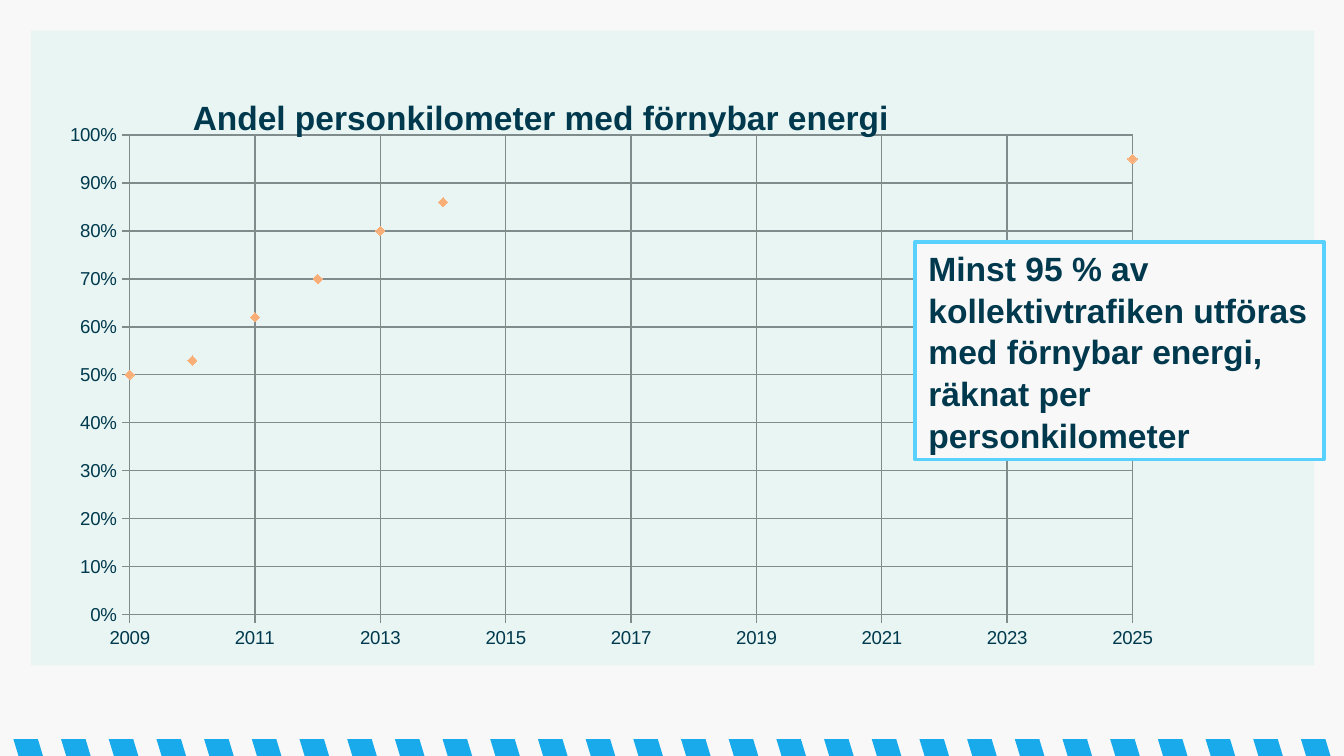
from lxml.etree import SubElement
from pptx import Presentation
from pptx.chart.data import XyChartData
from pptx.dml.color import RGBColor
from pptx.enum.chart import XL_CHART_TYPE, XL_MARKER_STYLE, XL_TICK_MARK
from pptx.enum.shapes import MSO_SHAPE
from pptx.enum.text import MSO_ANCHOR, PP_ALIGN
from pptx.oxml import parse_xml
from pptx.oxml.ns import nsdecls, qn
from pptx.util import Pt

PAPER = RGBColor(0xF8, 0xF8, 0xF8)
MINT = RGBColor(0xE8, 0xF5, 0xF2)
NAVY = RGBColor(0x00, 0x39, 0x4D)
BLUE = RGBColor(0x19, 0xAA, 0xEB)
SKY = RGBColor(0x59, 0xD1, 0xFF)
ORANGE = RGBColor(0xF9, 0xAE, 0x77)
GREEN = RGBColor(0x33, 0x8A, 0x38)
GREY = RGBColor(0x80, 0x8C, 0x8C)

FONT = "Arial"
STRIPE_COUNT = 28
SHARES = {2009: 0.5, 2010: 0.53, 2011: 0.62, 2012: 0.7, 2013: 0.8, 2014: 0.86, 2025: 0.95}
TARGET_YEAR = 2025


def add_filled_shape(shapes, kind, left, top, width, height, color):
    shape = shapes.add_shape(kind, Pt(left), Pt(top), Pt(width), Pt(height))
    shape.shadow.inherit = False
    shape.fill.solid()
    shape.fill.fore_color.rgb = color
    shape.line.fill.background()
    return shape


def add_stripes(page, left, top, width, height):
    """Spread slanted stripes evenly from edge to edge of the box."""
    stripe_width = 15.84
    step = (width - stripe_width) / (STRIPE_COUNT - 1)
    group = page.shapes.add_group_shape()
    for index in range(STRIPE_COUNT):
        stripe = add_filled_shape(group.shapes, MSO_SHAPE.PARALLELOGRAM,
                                  left + index * step, top, stripe_width, height, BLUE)
        stripe.adjustments[0] = 0.304
        stripe._element.spPr.find(qn("a:xfrm")).set("flipH", "1")


def set_layout(parent, position, **fractions):
    """Place a chart part by fractions of the chart's size."""
    layout = parent.find(qn("c:layout"))
    if layout is None:
        layout = parse_xml(f"<c:layout {nsdecls('c')}/>")
        parent.insert(position, layout)
    manual = SubElement(layout, qn("c:manualLayout"))
    if "w" in fractions:
        SubElement(manual, qn("c:layoutTarget")).set("val", "inner")
    for name in ("x", "y"):
        SubElement(manual, qn(f"c:{name}Mode")).set("val", "edge")
    for name, value in fractions.items():
        SubElement(manual, qn(f"c:{name}")).set("val", str(value))


def style_axis(axis, low, high, unit, number_format):
    axis.minimum_scale, axis.maximum_scale, axis.major_unit = low, high, unit
    axis.major_tick_mark = XL_TICK_MARK.OUTSIDE
    axis.minor_tick_mark = XL_TICK_MARK.NONE
    axis.has_major_gridlines = True
    axis.tick_labels.number_format = number_format
    axis.tick_labels.number_format_is_linked = False
    for line in (axis.format.line, axis.major_gridlines.format.line):
        line.color.rgb = GREY
        line.width = Pt(0.75)


def style_marker(marker, color):
    marker.style = XL_MARKER_STYLE.DIAMOND
    marker.size = 5
    marker.format.fill.solid()
    marker.format.fill.fore_color.rgb = color
    marker.format.line.fill.background()


def style_font(font, size, bold=False):
    font.name = FONT
    font.size = Pt(size)
    font.bold = bold
    font.color.rgb = NAVY


def add_title(chart):
    chart.has_title = True
    para = chart.chart_title.text_frame.paragraphs[0]
    span = para.add_run()
    span.text = "Andel personkilometer med förnybar energi"
    style_font(span.font, 18, bold=True)
    title = chart.chart_title._element
    set_layout(title, 1, x=0.1, y=0.02)
    title.find(qn("c:overlay")).set("val", "1")


def add_energy_chart(page, left, top, width, height):
    data = XyChartData()
    points = data.add_series("Andel förnybar energi")
    for year, share in SHARES.items():
        points.add_data_point(year, share)
    chart = page.shapes.add_chart(XL_CHART_TYPE.XY_SCATTER, Pt(left), Pt(top),
                                  Pt(width), Pt(height), data).chart
    chart.has_legend = False
    style_font(chart.font, 10)
    add_title(chart)
    set_layout(chart._chartSpace.chart.plotArea, 0, x=0.05, y=0.1, w=0.88, h=0.84)
    style_axis(chart.category_axis, 2009, 2025, 2, "0")
    style_axis(chart.value_axis, 0, 1, 0.1, "0%")

    plot = chart.plots[0]
    plot.vary_by_categories = False
    series = plot.series[0]
    series.smooth = False
    series.format.line.fill.background()
    style_marker(series.marker, ORANGE)
    target = list(SHARES).index(TARGET_YEAR)
    style_marker(series.points[target].marker, GREEN)


def add_goal(page, left, top, width, height):
    box = add_filled_shape(page.shapes, MSO_SHAPE.RECTANGLE, left, top, width, height, PAPER)
    box.line.color.rgb = SKY
    box.line.width = Pt(2)
    frame = box.text_frame
    frame.word_wrap = True
    frame.vertical_anchor = MSO_ANCHOR.MIDDLE
    para = frame.paragraphs[0]
    para.alignment = PP_ALIGN.LEFT
    para.line_spacing = 1.04
    span = para.add_run()
    span.text = ("Minst 95 % av kollektivtrafiken utföras med förnybar energi, "
                 "räknat per personkilometer")
    style_font(span.font, 18, bold=True)


def main():
    deck = Presentation()
    deck.slide_width, deck.slide_height = Pt(720), Pt(405)
    page = deck.slides.add_slide(deck.slide_layouts[6])
    page.background.fill.solid()
    page.background.fill.fore_color.rgb = PAPER

    add_stripes(page, 7.2, 396, 705.6, 9)
    add_filled_shape(page.shapes, MSO_SHAPE.RECTANGLE, 16.5, 16.5, 687.5, 340, MINT)
    add_energy_chart(page, 37.5, 41.75, 612, 306)
    add_goal(page, 490.3, 129.6, 219, 116.6)
    deck.save("out.pptx")


if __name__ == "__main__":
    main()
